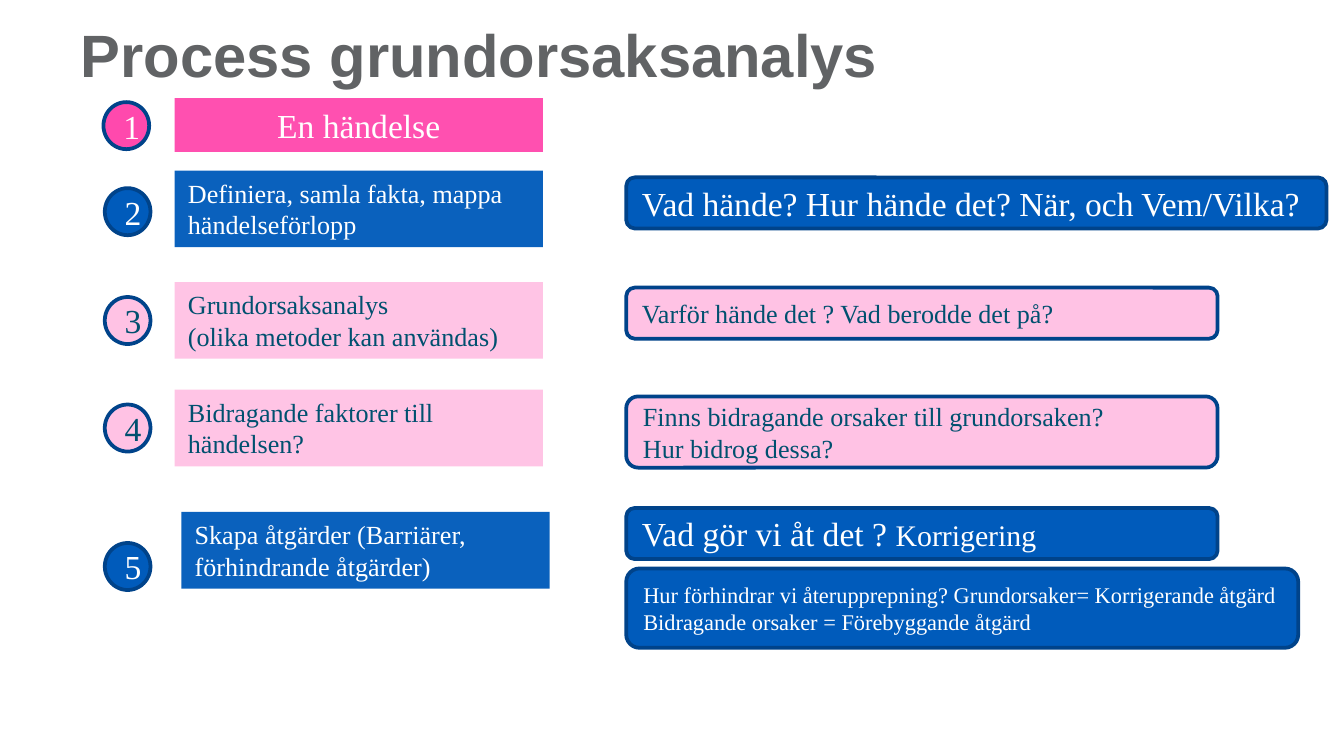
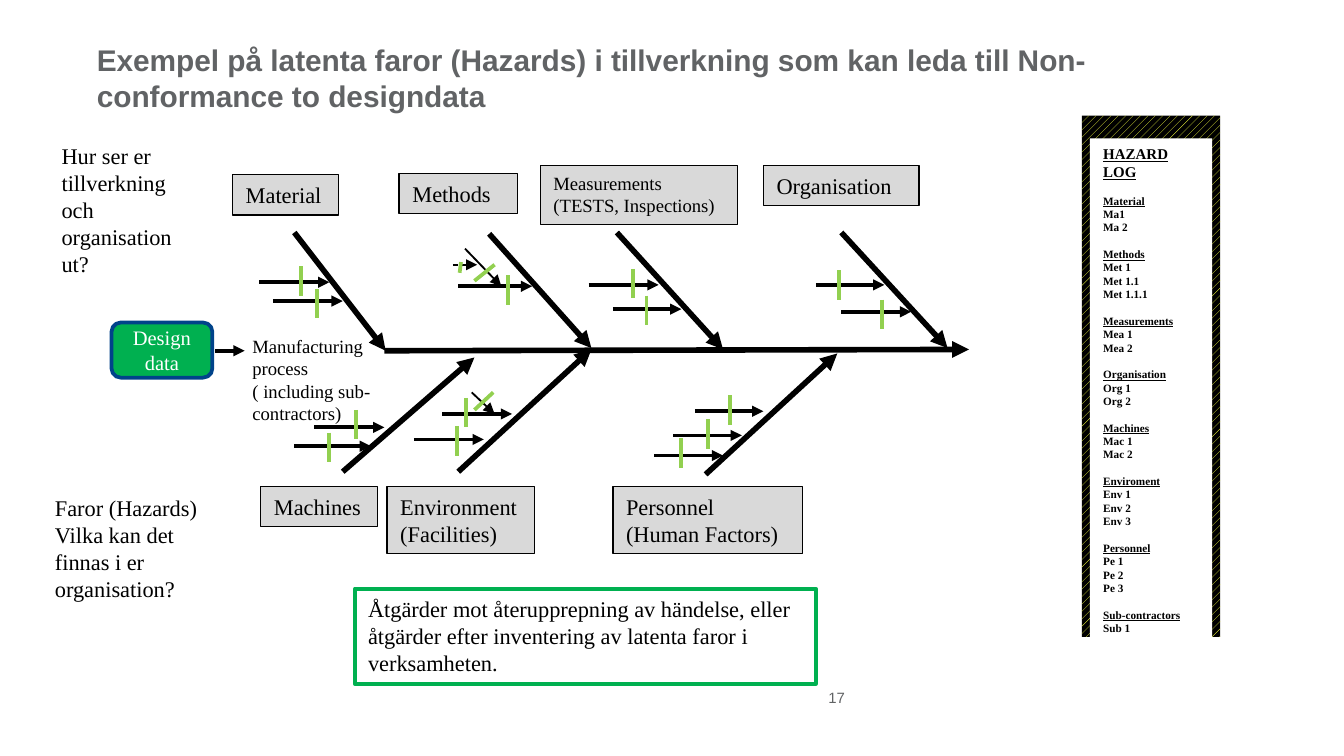
import pptx
import pptx.dml.color
import pptx.enum.dml
import pptx.enum.shapes
import pptx.enum.text
import pptx.oxml.ns
import pptx.util
from lxml import etree

Inches = pptx.util.Inches
Pt = pptx.util.Pt
SHAPES = pptx.enum.shapes.MSO_SHAPE
ALIGN = pptx.enum.text.PP_ALIGN
ANCHOR = pptx.enum.text.MSO_ANCHOR

COLORS = {
    "grey": "616365", "black": "000000", "white": "FFFFFF",
    "blue": "005BBB", "navy": "00438A", "pink": "FF49AD",
    "rose": "FFC2E4", "petrol": "00506F", "label": "D9D9D9",
    "green": "00B050", "lime": "92D050", "yellow": "F6FF40",
}
TITLE_FONT = "Arial"
BODY_FONT = "Times New Roman"
TEXT_ON = {"blue": "white", "pink": "white", "rose": "petrol"}

# Slide 1: number, fill, circle (left, top), box (left, top, height), size, lines
STEPS = [
    (1, "pink", (0.77, 0.76), (1.3, 0.73, 0.4), 18, ["En händelse"]),
    (2, "blue", (0.78, 1.4), (1.3, 1.27, 0.57), 14,
     ["Definiera, samla fakta, mappa händelseförlopp"]),
    (3, "rose", (0.78, 2.21), (1.3, 2.1, 0.57), 14,
     ["Grundorsaksanalys", "(olika metoder kan användas)"]),
    (4, "rose", (0.78, 3.01), (1.3, 2.9, 0.57), 14,
     ["Bidragande faktorer till händelsen?"]),
    (5, "blue", (0.78, 4.04), (1.35, 3.81, 0.57), 14,
     ["Skapa åtgärder (Barriärer, förhindrande åtgärder)"]),
]
# fill, top, width, height, size, lines (a line may be a list of sized runs)
QUESTIONS = [
    ("blue", 1.32, 5.21, 0.38, 18,
     ["Vad hände? Hur hände det? När, och Vem/Vilka?"]),
    ("rose", 2.14, 4.4, 0.38, 14, ["Varför hände det ? Vad berodde det på?"]),
    ("rose", 2.95, 4.4, 0.53, 14,
     ["Finns bidragande orsaker till grundorsaken?", "Hur bidrog dessa?"]),
    ("blue", 3.78, 4.4, 0.38, 18,
     [[("Vad gör vi åt det ? ", 18), ("Korrigering", 16)]]),
    ("blue", 4.23, 5, 0.59, 12,
     ["Hur förhindrar vi återupprepning? Grundorsaker= Korrigerande åtgärd",
      "Bidragande orsaker = Förebyggande åtgärd"]),
]

# Slide 2: box (left, top, width, height), size, lines
CAUSES = [
    ((1.73, 1.3, 0.79, 0.3), 12, ["Material"]),
    ((2.97, 1.29, 0.88, 0.3), 12, ["Methods"]),
    ((4.02, 1.23, 1.47, 0.44), 10, ["Measurements", "(TESTS, Inspections)"]),
    ((5.68, 1.23, 1.16, 0.3), 12, ["Organisation"]),
    ((1.94, 3.62, 0.87, 0.3), 12, ["Machines"]),
    ((2.88, 3.62, 1.1, 0.5), 12, ["Environment", "(Facilities)"]),
    ((4.56, 3.62, 1.41, 0.5), 12, ["Personnel", "(Human Factors)"]),
]
NOTES = [
    ((1.78, 2.44, 1.08, 0.77), 10,
     ["Manufacturing process ( including sub-contractors)"]),
    ((0.36, 1.01, 1.08, 1.11), 12,
     ["Hur ser er tillverkning och organisation ut?"]),
    ((0.31, 3.63, 1.31, 0.91), 12,
     ["Faror (Hazards)", "Vilka kan det finnas i er organisation?"]),
]
ACTIONS = ("Åtgärder mot återupprepning av händelse, eller åtgärder efter "
           "inventering av latenta faror i verksamheten.")
HAZARD_LOG = {
    "Material": ["Ma1", "Ma 2"],
    "Methods": ["Met 1", "Met 1.1", "Met 1.1.1"],
    "Measurements": ["Mea 1", "Mea 2"],
    "Organisation": ["Org 1", "Org 2"],
    "Machines": ["Mac 1", "Mac 2"],
    "Enviroment": ["Env 1", "Env 2", "Env 3"],
    "Personnel": ["Pe 1", "Pe 2", "Pe 3"],
    "Sub-contractors": ["Sub 1"],
}
# Spine first, then the bones: start x, start y, tip x, tip y
BONES = [
    (2.86, 2.61, 7.21, 2.6),
    (2.19, 1.73, 2.87, 2.61), (3.64, 1.74, 4.4, 2.59),
    (4.59, 1.73, 5.38, 2.6), (6.26, 1.73, 7.05, 2.59),
    (2.55, 3.51, 3.53, 2.66), (3.41, 3.51, 4.4, 2.6),
    (5.25, 3.53, 6.23, 2.63),
]
# Level arrows: start x, tip x, y
HAZARDS = [
    (1.6, 1.82, 2.61), (1.93, 2.45, 2.1), (2.03, 2.55, 2.24),
    (3.41, 3.96, 2.13), (4.38, 4.9, 2.12), (4.56, 5.07, 2.3),
    (6.07, 6.58, 2.12), (6.26, 6.78, 2.32), (2.34, 2.86, 3.18),
    (2.19, 2.76, 3.32), (3.29, 3.81, 3.08), (3.08, 3.6, 3.27),
    (5.17, 5.68, 3.06), (5.01, 5.52, 3.24), (4.87, 5.38, 3.39),
]
SUB_HAZARDS = [(3.46, 1.85, 3.73, 2.13), (3.51, 2.92, 3.68, 3.08)]
DASHED_HAZARD = (3.37, 1.97, 3.55, 1.97)
BARRIER_HEIGHT = 0.22
# Upright barriers: x, top
BARRIERS = [
    (2.24, 1.98), (2.36, 2.15), (2.65, 3.05), (2.45, 3.22), (3.4, 3.17),
    (3.47, 2.96), (3.78, 2.05), (4.71, 2), (4.81, 2.2), (5.43, 2.94),
    (5.27, 3.12), (5.07, 3.26), (6.56, 2.23), (6.24, 2.01),
]
SMALL_BARRIERS = [(3.67, 2.92, 3.53, 3.05), (3.68, 1.97, 3.53, 2.09),
                  (3.43, 1.95, 3.42, 2.03)]


def rgb(name):
    return pptx.dml.color.RGBColor.from_string(COLORS[name])


def add_run(paragraph, text, size, color, font=BODY_FONT, bold=False,
            underline=False):
    run = paragraph.add_run()
    run.text = text
    run.font.name = font
    run.font.size = Pt(size)
    run.font.color.rgb = rgb(color)
    run.font.bold = bold
    run.font.underline = underline


def add_paragraph(frame, align=ALIGN.LEFT):
    """Use the empty first paragraph, or append a new one."""
    first = frame.paragraphs[0]
    paragraph = frame.add_paragraph() if first.runs else first
    paragraph.alignment = align
    return paragraph


def prepare_frame(shape, anchor=ANCHOR.TOP):
    frame = shape.text_frame
    frame.word_wrap = True
    frame.auto_size = pptx.enum.text.MSO_AUTO_SIZE.NONE
    frame.vertical_anchor = anchor
    return frame


def write_lines(shape, lines, size, color, align=ALIGN.LEFT,
                anchor=ANCHOR.TOP, font=BODY_FONT):
    frame = prepare_frame(shape, anchor)
    for line in lines:
        paragraph = add_paragraph(frame, align)
        runs = [(line, size)] if isinstance(line, str) else line
        for text, run_size in runs:
            add_run(paragraph, text, run_size, color, font)


def add_box(slide, kind, box, fill=None, line=None, width=2, opacity=None):
    shape = slide.shapes.add_shape(kind, *map(Inches, box))
    shape.shadow.inherit = False
    if fill:
        shape.fill.solid()
        shape.fill.fore_color.rgb = rgb(fill)
    else:
        shape.fill.background()
    if opacity:
        color = shape._element.spPr.find(".//" + pptx.oxml.ns.qn("a:srgbClr"))
        alpha = etree.SubElement(color, pptx.oxml.ns.qn("a:alpha"))
        alpha.set("val", str(opacity * 1000))
    if line:
        shape.line.color.rgb = rgb(line)
        shape.line.width = Pt(width)
    else:
        shape.line.fill.background()
    return shape


def add_line(slide, points, width, color="black", arrow=True):
    connector = slide.shapes.add_connector(
        pptx.enum.shapes.MSO_CONNECTOR.STRAIGHT, *map(Inches, points))
    connector.line.color.rgb = rgb(color)
    connector.line.width = Pt(width)
    if arrow:
        tip = etree.SubElement(connector.line._get_or_add_ln(),
                               pptx.oxml.ns.qn("a:tailEnd"))
        tip.set("type", "triangle")
    etree.SubElement(connector._element.spPr, pptx.oxml.ns.qn("a:effectLst"))
    return connector


def add_text(slide, box, lines, size, color="black", **options):
    shape = slide.shapes.add_textbox(*map(Inches, box))
    write_lines(shape, lines, size, color, **options)
    return shape


def add_titled_slide(presentation, title, box, size):
    slide = presentation.slides.add_slide(presentation.slide_layouts[5])
    shape = slide.shapes.title
    shape.left, shape.top, shape.width, shape.height = map(Inches, box)
    add_run(add_paragraph(prepare_frame(shape)), title, size, "grey",
            TITLE_FONT, bold=True)
    return slide


def build_process(presentation):
    slide = add_titled_slide(presentation, "Process grundorsaksanalys",
                             (0.5, 0.08, 8.87, 0.61), 32)
    for number, fill, corner, (left, top, height), size, lines in STEPS:
        circle = add_box(slide, SHAPES.FLOWCHART_CONNECTOR,
                         (*corner, 0.34, 0.35), fill, "navy")
        write_lines(circle, [str(number)], 18, TEXT_ON[fill], ALIGN.CENTER,
                    ANCHOR.MIDDLE)
        step = add_box(slide, SHAPES.RECTANGLE, (left, top, 2.74, height),
                       fill, opacity=96)
        write_lines(step, lines, size, TEXT_ON[fill],
                    ALIGN.CENTER if number == 1 else ALIGN.LEFT)
    for fill, top, width, height, size, lines in QUESTIONS:
        question = add_box(slide, SHAPES.ROUNDED_RECTANGLE,
                           (4.66, top, width, height), fill, "navy")
        write_lines(question, lines, size, TEXT_ON[fill],
                    anchor=ANCHOR.MIDDLE)


def add_hazard_log(slide):
    band = add_box(slide, SHAPES.RECTANGLE, (8.05, 0.86, 1.03, 3.88))
    band.fill.patterned()
    band.fill.pattern = pptx.enum.dml.MSO_PATTERN.WIDE_UPWARD_DIAGONAL
    band.fill.fore_color.rgb = rgb("yellow")
    band.fill.back_color.rgb = rgb("black")
    log = add_box(slide, SHAPES.RECTANGLE, (8.11, 1.03, 0.91, 4.01), "white")
    frame = prepare_frame(log)
    add_run(add_paragraph(frame), "HAZARD LOG", 8, "black", bold=True,
            underline=True)
    for heading, entries in HAZARD_LOG.items():
        paragraph = add_paragraph(frame)
        paragraph.space_before = Pt(7)
        add_run(paragraph, heading, 6, "black", bold=True, underline=True)
        for entry in entries:
            add_run(add_paragraph(frame), entry, 6, "black", bold=True)


def build_fishbone(presentation):
    slide = add_titled_slide(
        presentation,
        "Exempel på latenta faror (Hazards) i tillverkning som kan leda till "
        "Non-conformance to designdata", (0.62, 0.26, 8.87, 0.38), 16)
    add_hazard_log(slide)
    for box, size, lines in CAUSES:
        cause = add_box(slide, SHAPES.RECTANGLE, box, "label", "black", 0.75)
        write_lines(cause, lines, size, "black")
    for bone in BONES:
        add_line(slide, bone, 3)
    for start, tip, y in HAZARDS:
        add_line(slide, (start, y, tip, y), 2)
    for sub_hazard in SUB_HAZARDS:
        add_line(slide, sub_hazard, 1)
    dashed = add_line(slide, DASHED_HAZARD, 1)
    dashed.line.dash_style = pptx.enum.dml.MSO_LINE.SQUARE_DOT
    for box, size, lines in NOTES:
        add_text(slide, box, lines, size)
    design = add_box(slide, SHAPES.ROUNDED_RECTANGLE,
                     (0.83, 2.4, 0.75, 0.41), "green", "navy")
    write_lines(design, ["Design", "data"], 11, "white", ALIGN.CENTER,
                ANCHOR.MIDDLE)
    actions = add_box(slide, SHAPES.RECTANGLE, (2.64, 4.38, 3.43, 0.71),
                      line="green")
    write_lines(actions, [ACTIONS], 12, "black")
    uprights = [(x, top, x, top + BARRIER_HEIGHT) for x, top in BARRIERS]
    for barrier in uprights + SMALL_BARRIERS:
        add_line(slide, barrier, 2, "lime", arrow=False)
    number = add_text(slide, (5.51, 5.12, 1.43, 0.14), ["17"], 8,
                      color="grey", align=ALIGN.CENTER, anchor=ANCHOR.MIDDLE,
                      font=TITLE_FONT)
    number.text_frame.margin_top = number.text_frame.margin_bottom = 0


def main():
    presentation = pptx.Presentation()
    presentation.slide_width = Inches(10)
    presentation.slide_height = presentation.slide_width * 9 // 16
    build_process(presentation)
    build_fishbone(presentation)
    presentation.save("out.pptx")


if __name__ == "__main__":
    main()
